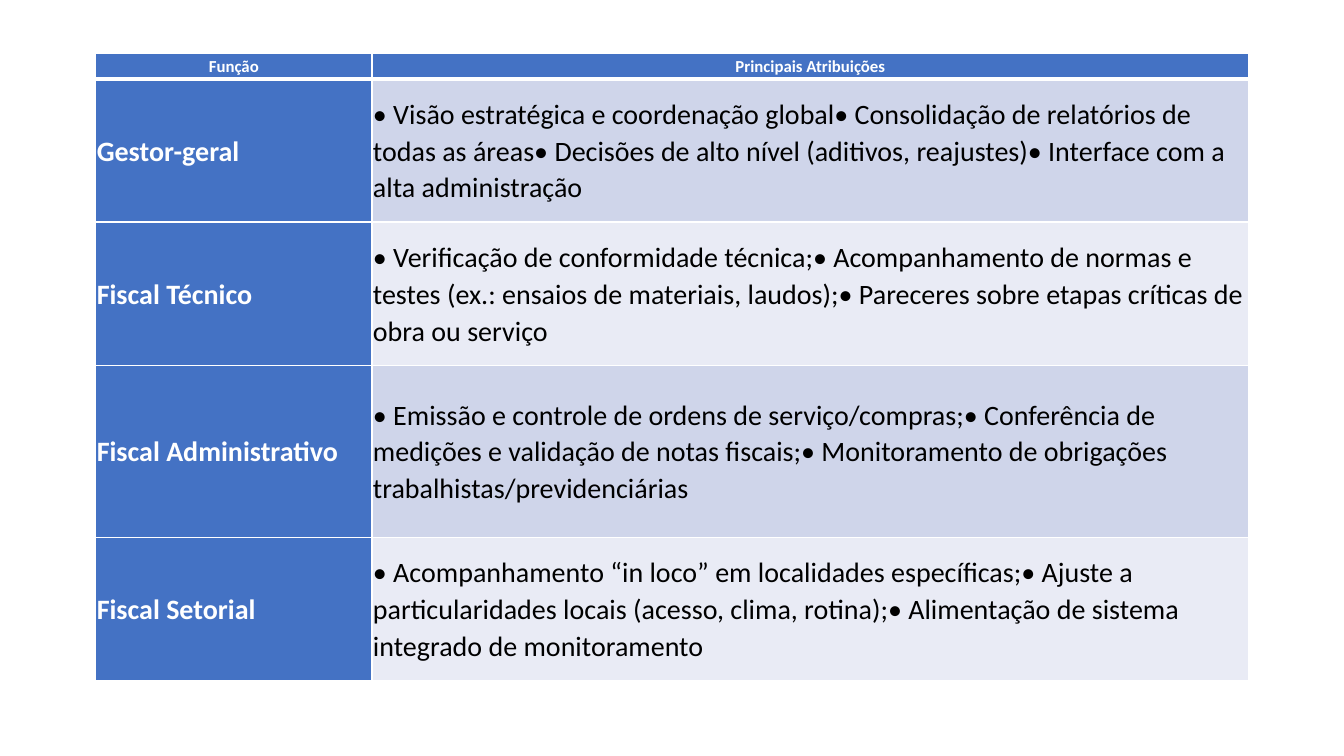
from dataclasses import dataclass

from lxml.etree import SubElement
from pptx import Presentation
from pptx.dml.color import RGBColor
from pptx.enum.text import MSO_ANCHOR, PP_ALIGN
from pptx.oxml.ns import qn
from pptx.table import _Cell
from pptx.util import Pt

COLORS = {
    "blue": "4472C4",
    "band_dark": "CFD5EA",
    "band_light": "E9EBF5",
    "white": "FFFFFF",
    "black": "000000",
}
FONT = "Calibri"
COLUMN_WIDTHS = (197.3, 626.4)
HEADER_HEIGHT = 18
CELL_MARGIN = 0.72
THIN, THICK = 1, 3


@dataclass(frozen=True)
class Role:
    title: str
    duties: str
    height: float = 102.24


@dataclass(frozen=True)
class CellStyle:
    fill: str
    color: str
    bold: bool
    size: float = 20
    align: PP_ALIGN = PP_ALIGN.LEFT
    top: float = THIN
    bottom: float = THIN


HEADINGS = ("Função", "Principais Atribuições")
ROLES = (
    Role(
        "Gestor-geral",
        "• Visão estratégica e coordenação global"
        "• Consolidação de relatórios de todas as áreas"
        "• Decisões de alto nível (aditivos, reajustes)"
        "• Interface com a alta administração",
    ),
    Role(
        "Fiscal Técnico",
        "• Verificação de conformidade técnica;"
        "• Acompanhamento de normas e testes (ex.: ensaios de materiais, laudos);"
        "• Pareceres sobre etapas críticas de obra ou serviço",
    ),
    Role(
        "Fiscal Administrativo",
        "• Emissão e controle de ordens de serviço/compras;"
        "• Conferência de medições e validação de notas fiscais;"
        "• Monitoramento de obrigações trabalhistas/previdenciárias",
        height=122.9,
    ),
    Role(
        "Fiscal Setorial",
        "• Acompanhamento “in loco” em localidades específicas;"
        "• Ajuste a particularidades locais (acesso, clima, rotina);"
        "• Alimentação de sistema integrado de monitoramento",
    ),
)


def add_borders(cell: _Cell, top: float, bottom: float) -> None:
    properties = cell._tc.get_or_add_tcPr()
    widths = {"lnL": THIN, "lnR": THIN, "lnT": top, "lnB": bottom}
    for side, width in widths.items():
        border = SubElement(properties, qn(f"a:{side}"), w=str(Pt(width)))
        solid = SubElement(border, qn("a:solidFill"))
        SubElement(solid, qn("a:srgbClr"), val=COLORS["white"])


def fill_cell(cell: _Cell, text: str, style: CellStyle) -> None:
    add_borders(cell, style.top, style.bottom)
    cell.fill.solid()
    cell.fill.fore_color.rgb = RGBColor.from_string(COLORS[style.fill])
    cell.vertical_anchor = MSO_ANCHOR.MIDDLE
    cell.margin_left = cell.margin_right = Pt(CELL_MARGIN)
    cell.margin_top = cell.margin_bottom = Pt(CELL_MARGIN)
    paragraph = cell.text_frame.paragraphs[0]
    paragraph.alignment = style.align
    paragraph.line_spacing = 1.07
    paragraph.space_after = Pt(8)
    run = paragraph.add_run()
    run.text = text
    run.font.name = FONT
    run.font.size = Pt(style.size)
    run.font.bold = style.bold
    run.font.color.rgb = RGBColor.from_string(COLORS[style.color])


def main() -> None:
    presentation = Presentation()
    presentation.slide_width, presentation.slide_height = Pt(960), Pt(540)
    slide = presentation.slides.add_slide(presentation.slide_layouts[6])

    # Table grid
    heights = (HEADER_HEIGHT, *(role.height for role in ROLES))
    roles_table = slide.shapes.add_table(
        len(heights), len(COLUMN_WIDTHS), Pt(68.4), Pt(38.4),
        Pt(sum(COLUMN_WIDTHS)), Pt(sum(heights)),
    ).table
    for column, width in zip(roles_table.columns, COLUMN_WIDTHS):
        column.width = Pt(width)
    for row, height in zip(roles_table.rows, heights):
        row.height = Pt(height)

    # Header row
    heading_style = CellStyle("blue", "white", True, size=12,
                              align=PP_ALIGN.CENTER, bottom=THICK)
    for column_index, heading in enumerate(HEADINGS):
        fill_cell(roles_table.cell(0, column_index), heading, heading_style)

    # One banded row per role
    for row_index, role in enumerate(ROLES, start=1):
        top = THICK if row_index == 1 else THIN
        band = "band_dark" if row_index % 2 else "band_light"
        fill_cell(roles_table.cell(row_index, 0), role.title,
                  CellStyle("blue", "white", True, top=top))
        fill_cell(roles_table.cell(row_index, 1), role.duties,
                  CellStyle(band, "black", False, top=top))

    presentation.save("out.pptx")


if __name__ == "__main__":
    main()
